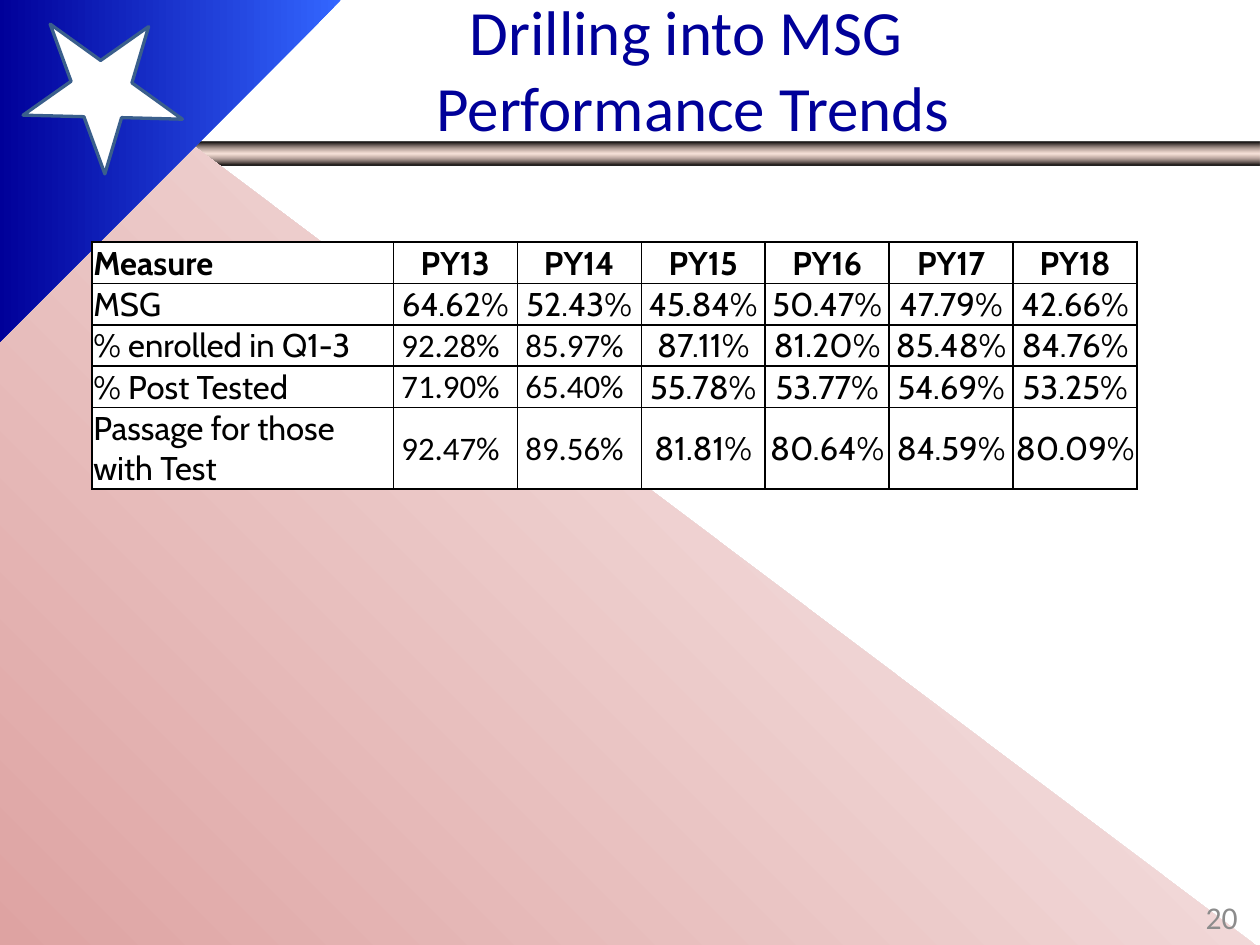
"""Build the slide on MSG performance trends."""
from lxml.etree import SubElement as Sub
from pptx import Presentation
from pptx.dml.color import RGBColor as RGB
from pptx.enum.shapes import MSO_SHAPE as Shape
from pptx.enum.text import MSO_ANCHOR as Anchor, PP_ALIGN as Align
from pptx.oxml.ns import qn
from pptx.util import Inches, Pt

HUES = {"white": "FFFFFF", "black": "000000", "navy": "000099", "blue": "3366FF",
        "rose": "DEA3A2", "tan": "EFC1AF", "steel": "3A5F8C", "gray": "8C8C8C"}


def blend(shape, stops, angle):
    shape.shadow.inherit = False
    shape.line.fill.background()
    shape.fill.gradient()
    shape.fill.gradient_angle = angle
    marks = shape._element.spPr.find(".//" + qn("a:gsLst"))
    marks.clear()
    for place, hue, alpha in stops:
        mark = Sub(marks, qn("a:gs"), pos=str(place * 1000))
        tint = Sub(mark, qn("a:srgbClr"), val=HUES[hue])
        if alpha < 100:
            Sub(tint, qn("a:alpha"), val=str(alpha * 1000))


def write(para, text, size, font, hue, bold=False):
    run = para.add_run()
    run.text = text
    run.font.size = Pt(size)
    run.font.name = font
    run.font.bold = bold
    run.font.color.rgb = RGB.from_string(HUES[hue])


deck = Presentation()
deck.slide_width, deck.slide_height = Inches(10.67), Inches(8)
slide = deck.slides.add_slide(deck.slide_layouts[6])
shapes = slide.shapes

bar = shapes.add_shape(Shape.RECTANGLE, Inches(0), Inches(1.2), Inches(10.67), Inches(0.2))
blend(bar, [(0, "black", 100), (50, "tan", 47), (100, "black", 100)], 270)

wedges = [
    ([(0, 0), (10.67, 8.03), (0, 8.01)], "white", "rose", 225),
    ([(0, 0), (2.89, 0), (-0.02, 2.91)], "blue", "navy", 180),
]
for points, start, end, angle in wedges:
    spots = [(Inches(x), Inches(y)) for x, y in points]
    path = shapes.build_freeform(*spots[0])
    path.add_line_segments(spots[1:], close=True)
    blend(path.convert_to_shape(), [(0, start, 100), (100, end, 100)], angle)

star = shapes.add_shape(Shape.STAR_5_POINT, Inches(0.21), Inches(0.11), Inches(1.38), Inches(1.23))
star.rotation = 35.7
star.shadow.inherit = False
star.fill.solid()
star.fill.fore_color.rgb = RGB.from_string(HUES["white"])
star.line.color.rgb = RGB.from_string(HUES["steel"])
star.line.width = Pt(2)

labels = [
    ((1.16, -0.04, 9.42, 1.24), ["Drilling into MSG ", "Performance Trends"], 38.4, "navy", Align.CENTER),
    ((8.1, 7.55, 2.49, 0.43), ["20"], 19.3, "gray", Align.RIGHT),
]
for box, lines, size, hue, side in labels:
    frame = shapes.add_textbox(*map(Inches, box)).text_frame
    frame.word_wrap = True
    frame.vertical_anchor = Anchor.MIDDLE
    frame.margin_left = frame.margin_right = Inches(0.11)
    para = frame.paragraphs[0]
    para.alignment = side
    for n, line in enumerate(lines):
        if n:
            para.add_line_break()
        write(para, line, size, "Calibri", hue)

rows = [
    ["Measure", "PY13", "PY14", "PY15", "PY16", "PY17", "PY18"],
    ["MSG", "64.62%", "52.43%", "45.84%", "50.47%", "47.79%", "42.66%"],
    ["% enrolled in Q1-3", "92.28%", "85.97%", "87.11%", "81.20%", "85.48%", "84.76%"],
    ["% Post Tested", "71.90%", "65.40%", "55.78%", "53.77%", "54.69%", "53.25%"],
    ["Passage for those with Test", "92.47%", "89.56%", "81.81%", "80.64%", "84.59%", "80.09%"],
]
table = shapes.add_table(5, 7, Inches(0.78), Inches(2.05), Inches(8.82), Inches(2.08)).table
for c, col in enumerate(table.columns):
    col.width = Inches(1.05 if c else 2.55)
for r, row in enumerate(rows):
    table.rows[r].height = Inches(0.69 if r == 4 else 0.35)
    for c, text in enumerate(row):
        cell = table.cell(r, c)
        plain = r > 1 and c in (1, 2)
        cell.margin_left = Inches(0.07 if plain else 0.01)
        cell.margin_right = cell.margin_top = Inches(0.01)
        cell.margin_bottom = Inches(0)
        low = r == 0 or (c == 0 and r > 1)
        cell.vertical_anchor = Anchor.BOTTOM if low else Anchor.MIDDLE
        para = cell.text_frame.paragraphs[0]
        para.alignment = Align.LEFT if c == 0 or plain else Align.CENTER
        write(para, text, 20, "Calibri" if plain else "Cabin", "black", r == 0)
        props = cell._tc.get_or_add_tcPr()
        for side in ("L", "R", "T", "B"):
            edge = Sub(props, qn("a:ln" + side), w=str(Pt(1)))
            Sub(Sub(edge, qn("a:solidFill")), qn("a:srgbClr"), val=HUES["black"])
        cell.fill.solid()
        cell.fill.fore_color.rgb = RGB.from_string(HUES["white"])

deck.save("out.pptx")
